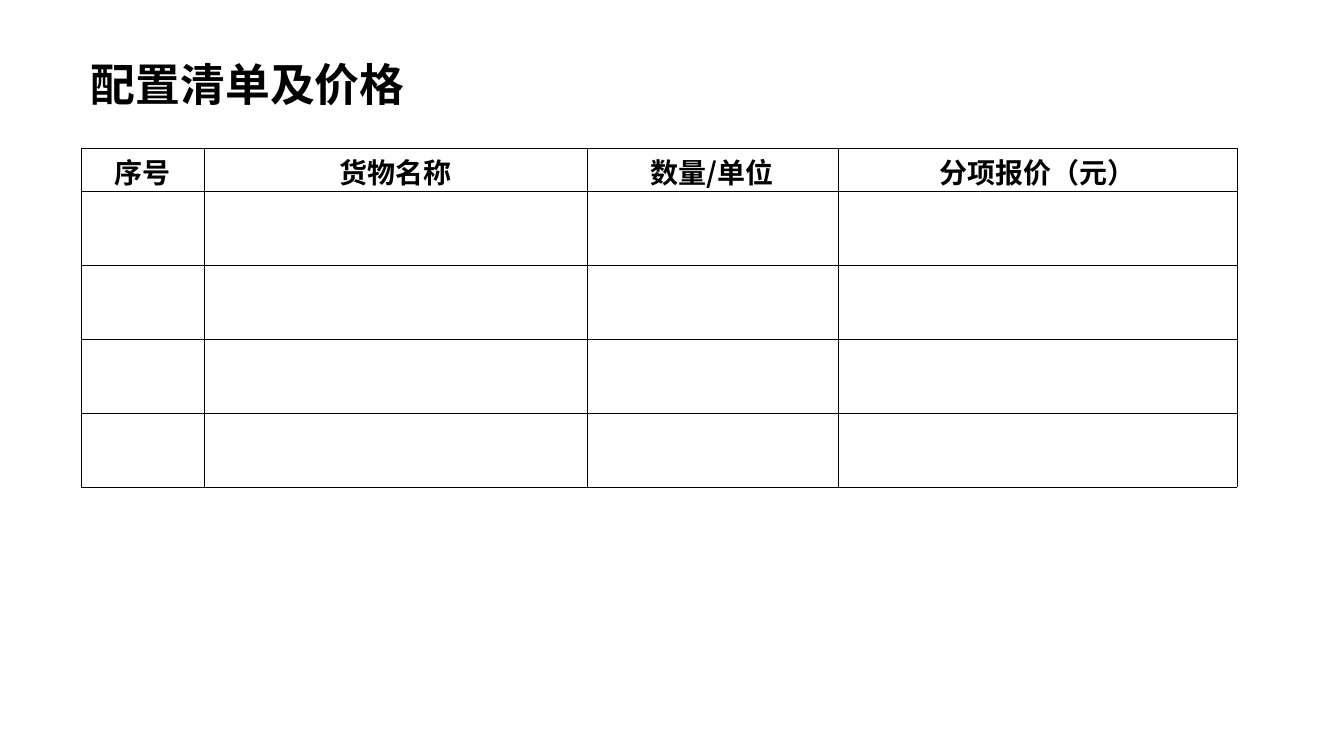
from lxml import etree
from pptx import Presentation
from pptx import util as u
from pptx.dml.color import RGBColor
from pptx.enum import text
from pptx.oxml.ns import qn

TITLE = "配置清单及价格"
COLUMNS = [("序号", 123), ("货物名称", 383), ("数量/单位", 251), ("分项报价（元）", 399)]
EMPTY_ROWS = 4
HEADER_HEIGHT, ROW_HEIGHT = 43, 74
LEFT, TITLE_TOP, TABLE_TOP = 81, 57, 148
FONT = "Noto Sans CJK SC"
BLACK = "000000"
EMU_PER_PX = 914400 / 100.8


def px(length):
    return u.Emu(round(length * EMU_PER_PX))


def color(value):
    return RGBColor.from_string(value)


def write(frame, content, size, align=text.PP_ALIGN.LEFT):
    paragraph = frame.paragraphs[0]
    paragraph.alignment = align
    run = paragraph.add_run()
    run.text = content
    font = run.font
    font.name, font.size, font.bold = FONT, u.Pt(size), True
    font.color.rgb = color(BLACK)
    east_asian = etree.SubElement(run._r.get_or_add_rPr(), qn("a:ea"))
    east_asian.set("typeface", FONT)


def add_borders(cell, width=0.5):
    properties = cell._tc.get_or_add_tcPr()
    for side in ("a:lnL", "a:lnR", "a:lnT", "a:lnB"):
        line = etree.SubElement(properties, qn(side), w=str(u.Pt(width)))
        fill = etree.SubElement(line, qn("a:solidFill"))
        etree.SubElement(fill, qn("a:srgbClr"), val=BLACK)


def add_title(slide):
    box = slide.shapes.add_textbox(px(LEFT), px(TITLE_TOP), px(436), px(65))
    frame = box.text_frame
    frame.word_wrap = True
    frame.margin_top = frame.margin_bottom = 0
    write(frame, TITLE, 32)


def add_price_table(slide):
    width = sum(column_width for _, column_width in COLUMNS)
    height = HEADER_HEIGHT + EMPTY_ROWS * ROW_HEIGHT
    table = slide.shapes.add_table(
        EMPTY_ROWS + 1, len(COLUMNS), px(LEFT), px(TABLE_TOP), px(width), px(height)
    ).table
    table.first_row = table.horz_banding = False
    for row in table.rows:
        row.height = px(ROW_HEIGHT)
    table.rows[0].height = px(HEADER_HEIGHT)
    for cell in table.iter_cells():
        add_borders(cell)
        cell.fill.background()
    for index, (heading, column_width) in enumerate(COLUMNS):
        table.columns[index].width = px(column_width)
        cell = table.cell(0, index)
        cell.margin_top, cell.margin_bottom = px(3), 0
        write(cell.text_frame, heading, 20, text.PP_ALIGN.CENTER)


def main():
    presentation = Presentation()
    presentation.slide_width, presentation.slide_height = px(1344), px(756)
    slide = presentation.slides.add_slide(presentation.slide_layouts[6])
    add_title(slide)
    add_price_table(slide)
    presentation.save("out.pptx")


if __name__ == "__main__":
    main()
